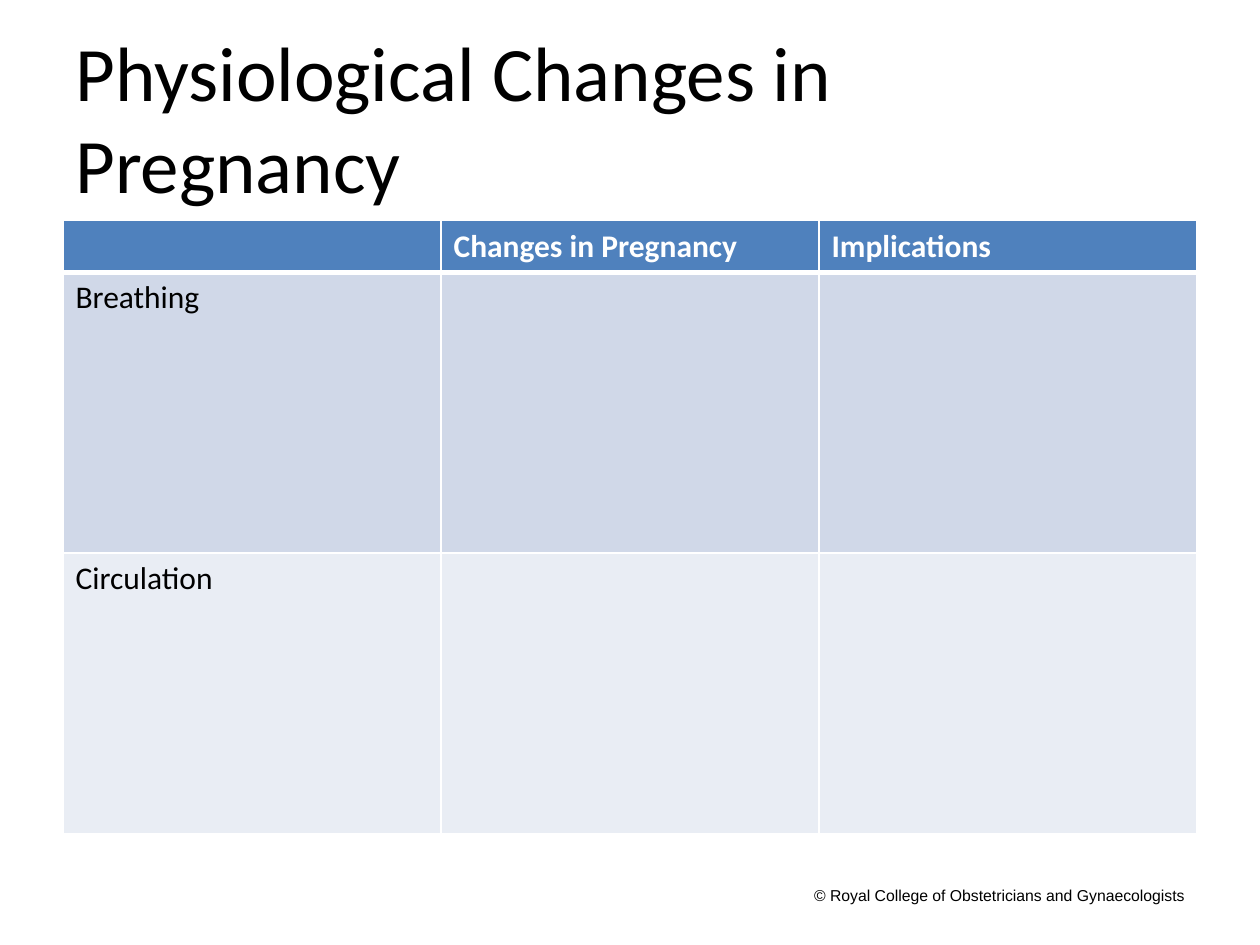
"""Build the slide on physiological changes in pregnancy."""
from lxml.etree import SubElement
from pptx import Presentation
from pptx.dml.color import RGBColor
from pptx.enum.text import MSO_ANCHOR, PP_ALIGN
from pptx.oxml.ns import qn
from pptx.util import Cm, Pt


def style_text(paragraph, size, font, color, bold=False):
    paragraph.font.size = Pt(size)
    paragraph.font.name = font
    paragraph.font.bold = bold
    paragraph.font.color.rgb = RGBColor.from_string(color)


def add_border(cell, side, points):
    line = SubElement(cell._tc.get_or_add_tcPr(), qn(f"a:ln{side}"), w=str(Pt(points)))
    fill = SubElement(line, qn("a:solidFill"))
    SubElement(fill, qn("a:srgbClr"), val="FFFFFF")


deck = Presentation()
deck.slide_width, deck.slide_height = Cm(25.4), Cm(19.05)
page = deck.slides.add_slide(deck.slide_layouts[6])

texts = [
    ("© Royal College of Obstetricians and Gynaecologists",
     (15.7, 17.53, 8.43, 1.02), 9, "Arial", PP_ALIGN.RIGHT),
    ("Physiological Changes in Pregnancy",
     (1.27, 0.76, 16.84, 3.18), 44, "Calibri", PP_ALIGN.LEFT),
]
for words, place, size, font, alignment in texts:
    box = page.shapes.add_textbox(*[Cm(length) for length in place])
    box.text_frame.word_wrap = True
    box.text_frame.vertical_anchor = MSO_ANCHOR.MIDDLE
    para = box.text_frame.paragraphs[0]
    para.text = words
    para.alignment = alignment
    style_text(para, size, font, "000000")

rows = [
    (["", "Changes in Pregnancy", "Implications"], 1.04, "4F81BD"),
    (["Breathing", "", ""], 5.66, "D0D8E8"),
    (["Circulation", "", ""], 5.66, "E9EDF4"),
]
frame = page.shapes.add_table(3, 3, Cm(1.27), Cm(4.45), Cm(22.86), Cm(12.36))
table = frame.table
for row_index, (labels, height, shade) in enumerate(rows):
    table.rows[row_index].height = Cm(height)
    header = row_index == 0
    borders = {"L": 1, "R": 1, "T": 3 if row_index == 1 else 1, "B": 3 if header else 1}
    for column_index, label in enumerate(labels):
        cell = table.cell(row_index, column_index)
        for side, points in borders.items():
            add_border(cell, side, points)
        cell.fill.solid()
        cell.fill.fore_color.rgb = RGBColor.from_string(shade)
        if label:
            cell.text = label
            style_text(cell.text_frame.paragraphs[0], 18, "Calibri",
                       "FFFFFF" if header else "000000", header)

deck.save("out.pptx")
